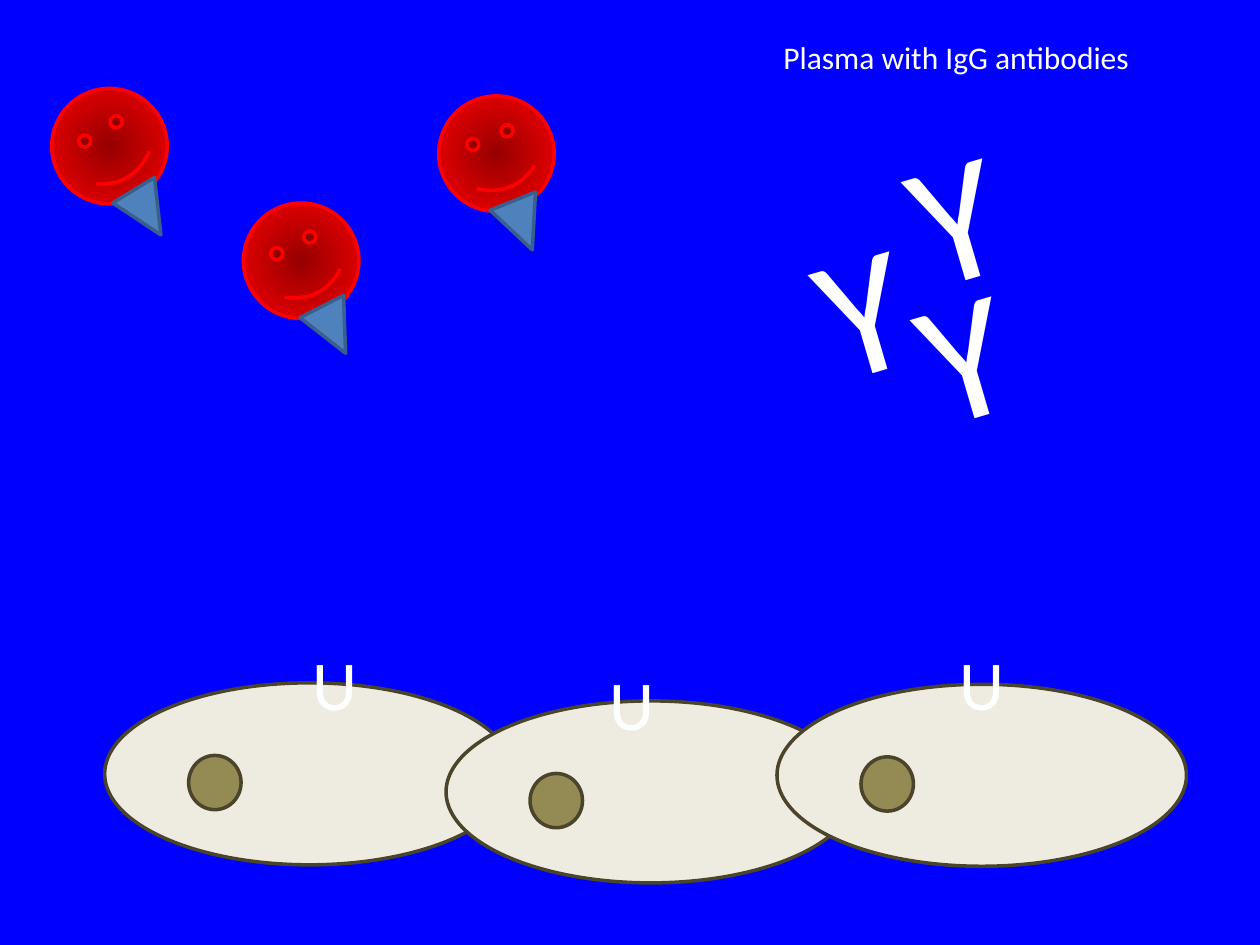
from math import cos, radians, sin
from typing import NamedTuple

from lxml.etree import SubElement
from pptx import Presentation
from pptx.dml.color import RGBColor
from pptx.enum.shapes import MSO_SHAPE as SHAPE
from pptx.enum.text import MSO_AUTO_SIZE as AUTO_SIZE
from pptx.oxml.ns import qn
from pptx.util import Pt

BLUE = RGBColor(0x00, 0x00, 0xFF)
WHITE = RGBColor(0xFF, 0xFF, 0xFF)
RED = RGBColor(0xFF, 0x00, 0x00)
MID_RED = RGBColor(0xD7, 0x00, 0x00)
DARK_RED = RGBColor(0x97, 0x00, 0x00)
ANTIGEN_FILL = RGBColor(0x4F, 0x81, 0xBD)
ANTIGEN_LINE = RGBColor(0x3A, 0x5F, 0x8C)
CELL_FILL = RGBColor(0xEE, 0xEC, 0xE1)
NUCLEUS_FILL = RGBColor(0x94, 0x8A, 0x54)
CELL_LINE = RGBColor(0x4A, 0x45, 0x2A)

FACE_SIZE = 66
ANTIGEN_W, ANTIGEN_H = 28, 30
ANTIGEN_DX, ANTIGEN_DY = -1.4, 43.6  # from the face centre, before rotation
CELL_W, CELL_H = 234, 104
NUCLEUS_W, NUCLEUS_H = 30, 31
NUCLEUS_DX, NUCLEUS_DY = 48, 41.5  # from the cell's top left corner


class RedCell(NamedTuple):
    cx: float
    cy: float
    rotation: float


class Label(NamedTuple):
    text: str
    left: float
    top: float
    width: float
    height: float
    size: float
    rotation: float = 0


RED_CELLS = [
    RedCell(172.1, 149, 333),
    RedCell(283.7, 87.8, 338.2),
    RedCell(62.6, 83.5, 328.6),
]
TISSUE_CELLS = [(59.8, 390.2), (254.9, 400.5), (444, 391)]
RECEPTORS = [Label("U", x, y, 39, 55.4, 40)
             for x, y in [(171.4, 362.2), (341.3, 373.7), (541.4, 362.2)]]
ANTIBODIES = [Label("Y", x, y, 39, 128, 100, 343.7)
              for x, y in [(460.8, 113.8), (514.1, 60.5), (519.1, 139.7)]]
CAPTION = Label("Plasma with IgG antibodies", 440.6, 18, 213, 29, 18)


def add_figure(slide, kind: SHAPE, left: float, top: float, width: float,
               height: float, fill: RGBColor, line: RGBColor,
               rotation: float = 0):
    s = slide.shapes.add_shape(kind, Pt(left), Pt(top), Pt(width), Pt(height))
    s.rotation = rotation
    s.shadow.inherit = False
    s.fill.solid()
    s.fill.fore_color.rgb = fill
    s.line.color.rgb = line
    s.line.width = Pt(2)
    return s


def set_radial_fill(s) -> None:
    """Shade from dark red at the centre to red at the rim."""
    s.fill.gradient()
    grad = s._element.spPr.find(qn("a:gradFill"))
    for child in list(grad):
        grad.remove(child)
    stops = SubElement(grad, qn("a:gsLst"))
    for percent, color in [(0, DARK_RED), (50, MID_RED), (100, RED)]:
        stop = SubElement(stops, qn("a:gs"), pos=str(percent * 1000))
        SubElement(stop, qn("a:srgbClr"), val=str(color))
    shade = SubElement(grad, qn("a:path"), path="circle")
    SubElement(shade, qn("a:fillToRect"),
               {side: "50000" for side in "ltrb"})


def add_red_cell(slide, cell: RedCell) -> None:
    """Draw a smiling face with its antigen triangle, turned together."""
    half = FACE_SIZE / 2
    face = add_figure(slide, SHAPE.SMILEY_FACE, cell.cx - half, cell.cy - half,
                      FACE_SIZE, FACE_SIZE, RED, RED, cell.rotation)
    set_radial_fill(face)
    a = radians(cell.rotation)
    cx = cell.cx + ANTIGEN_DX * cos(a) - ANTIGEN_DY * sin(a)
    cy = cell.cy + ANTIGEN_DX * sin(a) + ANTIGEN_DY * cos(a)
    add_figure(slide, SHAPE.ISOSCELES_TRIANGLE, cx - ANTIGEN_W / 2,
               cy - ANTIGEN_H / 2, ANTIGEN_W, ANTIGEN_H,
               ANTIGEN_FILL, ANTIGEN_LINE, cell.rotation - 180)


def add_tissue_cell(slide, left: float, top: float) -> None:
    add_figure(slide, SHAPE.OVAL, left, top, CELL_W, CELL_H,
               CELL_FILL, CELL_LINE)
    add_figure(slide, SHAPE.OVAL, left + NUCLEUS_DX, top + NUCLEUS_DY,
               NUCLEUS_W, NUCLEUS_H, NUCLEUS_FILL, CELL_LINE)


def add_label(slide, label: Label) -> None:
    s = slide.shapes.add_textbox(Pt(label.left), Pt(label.top),
                                 Pt(label.width), Pt(label.height))
    s.rotation = label.rotation
    tf = s.text_frame
    tf.word_wrap = True
    tf.auto_size = AUTO_SIZE.SHAPE_TO_FIT_TEXT
    p = tf.paragraphs[0]
    p.text = label.text
    p.font.name = "Calibri"
    p.font.size = Pt(label.size)
    p.font.color.rgb = WHITE


def main() -> None:
    prs = Presentation()
    prs.slide_width, prs.slide_height = Pt(720), Pt(540)
    slide = prs.slides.add_slide(prs.slide_layouts[6])
    slide.background.fill.solid()
    slide.background.fill.fore_color.rgb = BLUE

    for cell in RED_CELLS:
        add_red_cell(slide, cell)
    for left, top in TISSUE_CELLS:
        add_tissue_cell(slide, left, top)
    for label in [*RECEPTORS, *ANTIBODIES, CAPTION]:
        add_label(slide, label)
    prs.save("out.pptx")


if __name__ == "__main__":
    main()
